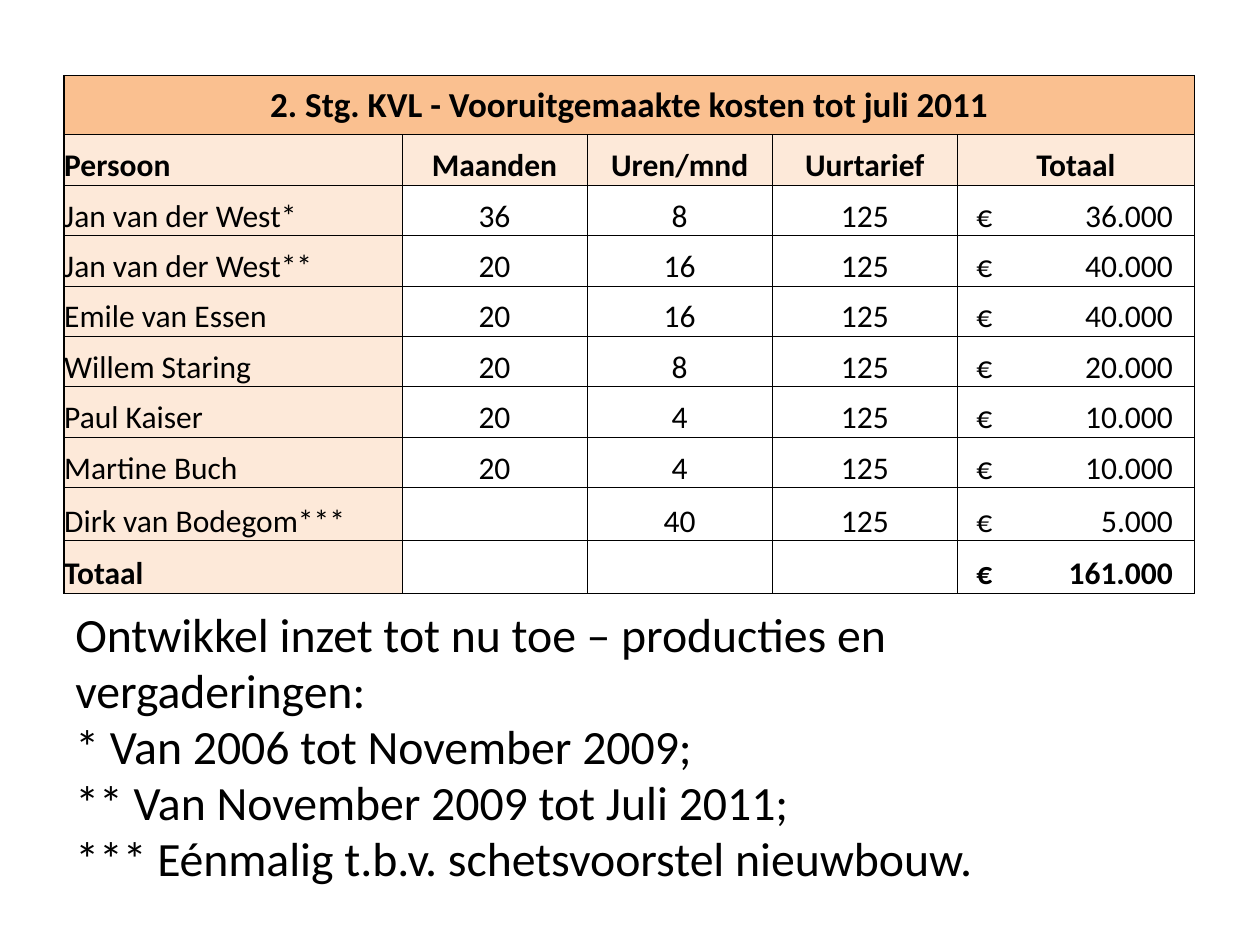
from lxml.etree import SubElement
from pptx import Presentation
from pptx.dml.color import RGBColor
from pptx.enum.text import MSO_ANCHOR as Anchor, PP_ALIGN as Align
from pptx.oxml.ns import qn
from pptx.util import Inches, Pt

BLACK = RGBColor(0x00, 0x00, 0x00)
ORANGE = RGBColor(0xFA, 0xC0, 0x90)
PEACH = RGBColor(0xFD, 0xE9, 0xD9)
THIN, THICK = 0.5, 1

COLUMN_WIDTHS = [2.68, 1.47, 1.47, 1.47, 1.88]
ROW_HEIGHTS = [0.47] + [0.4] * 7 + [0.42] * 2
HEADING = "2. Stg. KVL - Vooruitgemaakte kosten tot juli 2011"
COSTS = [
    ["Persoon", "Maanden", "Uren/mnd", "Uurtarief", "Totaal"],
    ["Jan van der West*", "36", "8", "125", "€\t36.000"],
    ["Jan van der West**", "20", "16", "125", "€\t40.000"],
    ["Emile van Essen", "20", "16", "125", "€\t40.000"],
    ["Willem Staring", "20", "8", "125", "€\t20.000"],
    ["Paul Kaiser", "20", "4", "125", "€\t10.000"],
    ["Martine Buch", "20", "4", "125", "€\t10.000"],
    ["Dirk van Bodegom***", "", "40", "125", "€\t5.000"],
    ["Totaal", "", "", "", "€\t161.000"],
]
NOTES = [
    "Ontwikkel inzet tot nu toe – producties en vergaderingen:",
    "* Van 2006 tot November 2009;",
    "** Van November 2009 tot Juli 2011;",
    "*** Eénmalig t.b.v. schetsvoorstel nieuwbouw.",
]


def write(paragraph, text, *, font="Calibri", size=18, bold=False,
          color=BLACK, align=Align.LEFT, spacing=None):
    paragraph.alignment = align
    if spacing:
        paragraph.line_spacing = spacing
    run = paragraph.add_run()
    run.text = text
    run.font.name, run.font.size, run.font.bold = font, Pt(size), bold
    run.font.color.rgb = color


class SlideBuilder:
    """Holds the style and the current slide; places by shares of its size."""

    def __init__(self, deck):
        self.deck = deck
        self.slide = deck.slides.add_slide(deck.slide_layouts[6])

    def area(self, left, top, width, height):
        w, h = self.deck.slide_width, self.deck.slide_height
        return int(left * w), int(top * h), int(width * w), int(height * h)

    def table(self, widths, heights, *place):
        frame = self.slide.shapes.add_table(len(heights), len(widths), *self.area(*place))
        table = frame.table
        table.first_row = table.horz_banding = False
        for column, width in zip(table.columns, widths):
            column.width = Inches(width)
        for row, height in zip(table.rows, heights):
            row.height = Inches(height)
        return table

    def cell(self, cell, text, *, fill=None, anchor=Anchor.BOTTOM, inset=0,
             tab=None, **style):
        cell.margin_left = Inches(inset)
        cell.margin_right = cell.margin_top = cell.margin_bottom = 0
        cell.vertical_anchor = anchor
        if fill is None:
            cell.fill.background()
        else:
            cell.fill.solid()
            cell.fill.fore_color.rgb = fill
        if text:
            paragraph = cell.text_frame.paragraphs[0]
            write(paragraph, text, **style)
            if tab:
                stops = SubElement(paragraph._p.get_or_add_pPr(), qn("a:tabLst"))
                SubElement(stops, qn("a:tab"), pos=str(Inches(tab)), algn="r")

    def borders(self, cell, **widths):
        properties = cell._tc.get_or_add_tcPr()
        for index, side in enumerate("LRTB"):
            line = SubElement(properties, qn(f"a:ln{side}"), w=str(Pt(widths[side])))
            solid = SubElement(line, qn("a:solidFill"))
            SubElement(solid, qn("a:srgbClr"), val=str(BLACK))
            properties.insert(index, line)

    def text(self, lines, *place, **style):
        frame = self.slide.shapes.add_textbox(*self.area(*place)).text_frame
        frame.word_wrap = True
        frame.margin_right = Inches(0.2)
        for index, line in enumerate(lines):
            paragraph = frame.add_paragraph() if index else frame.paragraphs[0]
            write(paragraph, line, **style)


def main():
    deck = Presentation()
    deck.slide_width, deck.slide_height = Inches(10), Inches(7.5)
    builder = SlideBuilder(deck)

    # Cost table: heading across all columns
    costs = builder.table(COLUMN_WIDTHS, ROW_HEIGHTS, 0.051, 0.08, 0.898, 0.54)
    last_row, last_col = len(ROW_HEIGHTS) - 1, len(COLUMN_WIDTHS) - 1
    costs.cell(0, 0).merge(costs.cell(0, last_col))
    builder.cell(costs.cell(0, 0), HEADING, fill=ORANGE, anchor=Anchor.MIDDLE,
                 size=20, bold=True, align=Align.CENTER)

    # Column names, persons and the sum
    for r, entries in enumerate(COSTS, start=1):
        for c, entry in enumerate(entries):
            amount = r > 1 and c == last_col
            builder.cell(
                costs.cell(r, c), entry,
                fill=PEACH if r == 1 or c == 0 else None,
                bold=r in (1, last_row),
                align=Align.LEFT if c == 0 or amount else Align.CENTER,
                inset=0.15 if amount else 0,
                tab=1.56 if amount else None)

    # Thin grid inside a thicker frame
    for r in range(last_row + 1):
        for c in range(last_col + 1):
            builder.borders(
                costs.cell(r, c),
                L=THICK if c == 0 else THIN,
                R=THICK if c == last_col else THIN,
                T=THICK if r == 0 else THIN,
                B=THICK if r == last_row else THIN)

    # Explanation of the asterisks
    builder.text(NOTES, 0.05, 0.636, 0.9, 0.293, size=27.3, spacing=0.98)

    deck.save("out.pptx")


if __name__ == "__main__":
    main()
